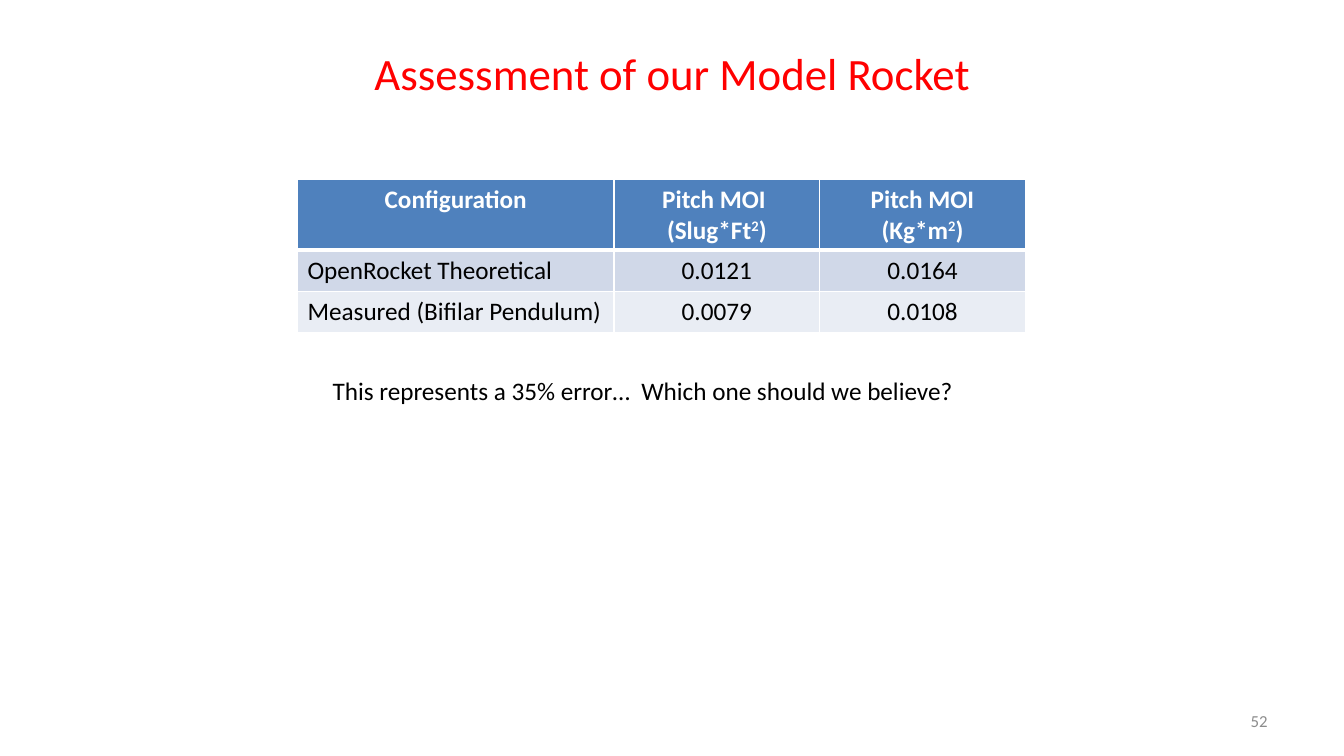
from lxml import etree
from pptx import Presentation
from pptx.dml.color import RGBColor
from pptx.enum.text import MSO_ANCHOR, PP_ALIGN
from pptx.oxml.ns import qn
from pptx.util import Inches, Pt

LEFT, CENTER, RIGHT = PP_ALIGN.LEFT, PP_ALIGN.CENTER, PP_ALIGN.RIGHT
TOP, MIDDLE = MSO_ANCHOR.TOP, MSO_ANCHOR.MIDDLE
BLANK_LAYOUT = 6
FONT = "Calibri"
COLORS = {
    "title": "FF0000",
    "text": "000000",
    "number": "8C8C8C",
    "white": "FFFFFF",
    "header": "4F81BD",
    "odd_row": "D0D8E8",
    "even_row": "E9EDF4",
}
COLUMN_WIDTHS = (3.14, 2.04, 2.04)
ROW_HEIGHTS = (0.7, 0.41, 0.41)
ROW_FILLS = ("header", "odd_row", "even_row")
# Each cell is a list of paragraphs; ^ marks the start and end of a superscript.
MOI_ROWS = (
    (["Configuration"], ["Pitch MOI  (Slug*Ft^2^)"], ["Pitch MOI", "(Kg*m^2^)"]),
    (["OpenRocket Theoretical"], ["0.0121"], ["0.0164"]),
    (["Measured (Bifilar Pendulum)"], ["0.0079"], ["0.0108"]),
)


def write_paragraphs(frame, lines, color, size=18, bold=False, align=LEFT):
    """Fill a text frame, raising the parts that stand between ^ marks."""
    font_values = {"name": FONT, "size": Pt(size), "bold": bold}
    for index, line in enumerate(lines):
        paragraph = frame.add_paragraph() if index else frame.paragraphs[0]
        paragraph.alignment = align
        for part_index, part in enumerate(line.split("^")):
            run = paragraph.add_run()
            run.text = part
            for name, value in font_values.items():
                setattr(run.font, name, value)
            run.font.color.rgb = RGBColor.from_string(COLORS[color])
            if part_index % 2:
                run._r.get_or_add_rPr().set("baseline", "30000")


def add_text(slide, box, text, color, anchor=TOP, **text_format):
    shape = slide.shapes.add_textbox(*map(Inches, box))
    shape.text_frame.word_wrap = True
    shape.text_frame.vertical_anchor = anchor
    write_paragraphs(shape.text_frame, [text], color, **text_format)


def set_borders(cell, bottom_width):
    properties = cell._tc.get_or_add_tcPr()
    widths = {"a:lnL": 1, "a:lnR": 1, "a:lnT": 1, "a:lnB": bottom_width}
    for position, (tag, width) in enumerate(widths.items()):
        line = etree.Element(qn(tag), w=str(Pt(width)))
        fill = etree.SubElement(line, qn("a:solidFill"))
        etree.SubElement(fill, qn("a:srgbClr"), val=COLORS["white"])
        properties.insert(position, line)


def add_moi_table(slide, left, top):
    box = (left, top, sum(COLUMN_WIDTHS), sum(ROW_HEIGHTS))
    table = slide.shapes.add_table(
        len(ROW_HEIGHTS), len(COLUMN_WIDTHS), *map(Inches, box)
    ).table
    for column, width in zip(table.columns, COLUMN_WIDTHS):
        column.width = Inches(width)
    for row_index, row in enumerate(MOI_ROWS):
        is_header = row_index == 0
        table.rows[row_index].height = Inches(ROW_HEIGHTS[row_index])
        for column_index, lines in enumerate(row):
            cell = table.cell(row_index, column_index)
            cell.fill.solid()
            cell.fill.fore_color.rgb = RGBColor.from_string(COLORS[ROW_FILLS[row_index]])
            set_borders(cell, bottom_width=3 if is_header else 1)
            write_paragraphs(
                cell.text_frame,
                lines,
                "white" if is_header else "text",
                bold=is_header,
                align=CENTER if is_header or column_index else LEFT,
            )


def build_assessment_slide(presentation):
    slide = presentation.slides.add_slide(presentation.slide_layouts[BLANK_LAYOUT])
    add_text(slide, (2.17, 0.3, 9, 0.85), "Assessment of our Model Rocket", "title",
             anchor=MIDDLE, size=32, align=CENTER)
    add_moi_table(slide, 2.95, 1.78)
    add_text(slide, (9.56, 6.95, 3.11, 0.4), "52", "number",
             anchor=MIDDLE, size=12, align=RIGHT)
    add_text(slide, (3.2, 3.67, 6.5, 0.4),
             "This represents a 35% error…  Which one should we believe?", "text")


def main():
    presentation = Presentation()
    presentation.slide_width = Inches(13.33)
    presentation.slide_height = Inches(7.5)
    build_assessment_slide(presentation)
    presentation.save("out.pptx")


if __name__ == "__main__":
    main()
